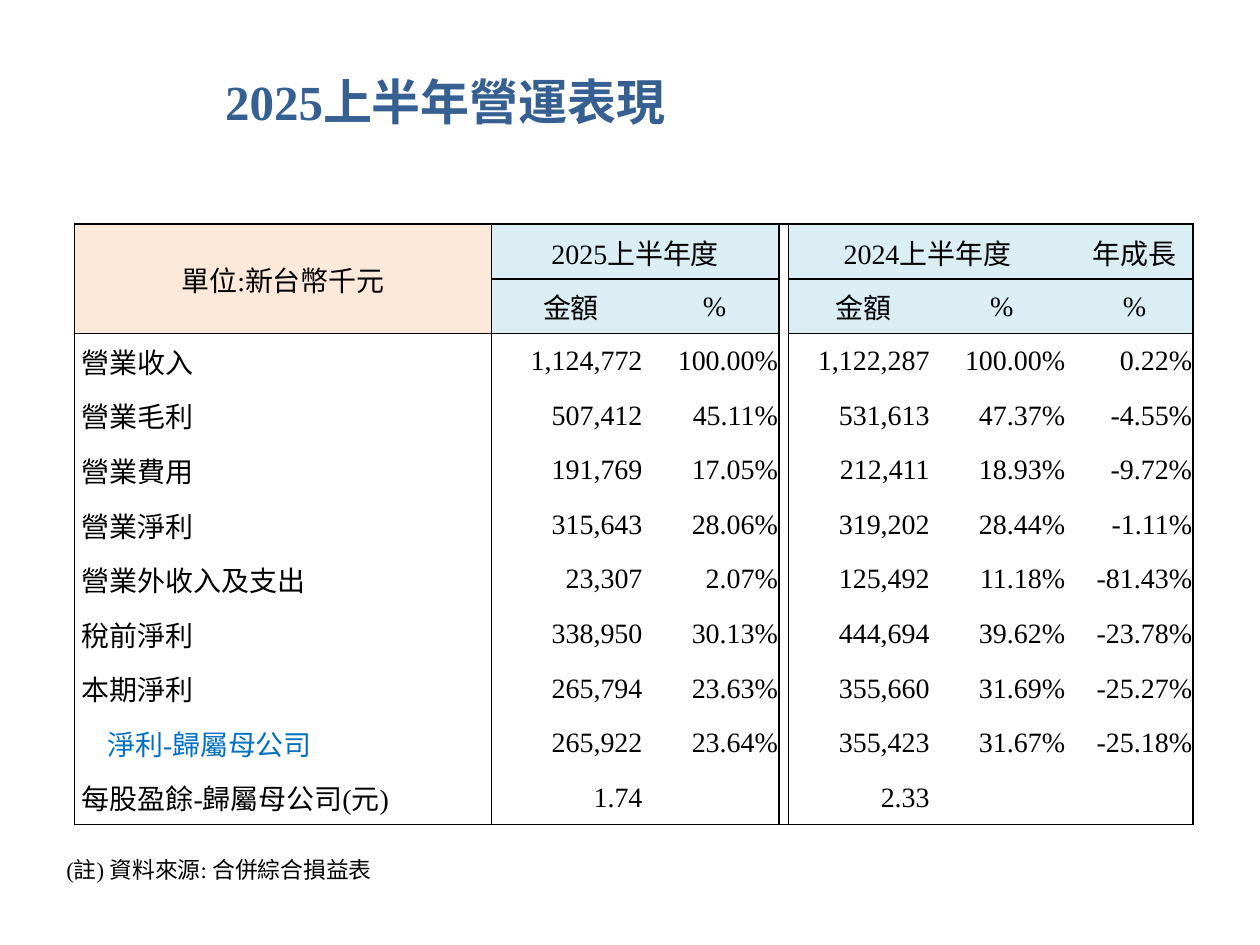
"""Build the slide with the operating results for the first half of 2025."""
from lxml import etree
from pptx import Presentation
from pptx import util as u
from pptx.dml.color import RGBColor
from pptx.enum import text
from pptx.oxml.ns import qn

COLORS = {"title": "376092", "text": "000000", "accent": "0070C0",
          "unit": "FDE9D9", "header": "DBEEF3"}
FONT = "Times New Roman"
NO_STYLE = "{2D5ABB26-0587-4C30-8999-92F81FD0307C}"

TITLE = "2025上半年營運表現"
NOTE = "(註) 資料來源: 合併綜合損益表"
HEADERS = [
    ["單位:新台幣千元", "2025上半年度", "", "", "2024上半年度", "", "", "年成長"],
    ["", "金額", "%", "", "金額", "%", "", "%"],
]
RESULTS = [
    ["營業收入", "1,124,772", "100.00%", "", "1,122,287", "100.00%", "", "0.22%"],
    ["營業毛利", "507,412", "45.11%", "", "531,613", "47.37%", "", "-4.55%"],
    ["營業費用", "191,769", "17.05%", "", "212,411", "18.93%", "", "-9.72%"],
    ["營業淨利", "315,643", "28.06%", "", "319,202", "28.44%", "", "-1.11%"],
    ["營業外收入及支出", "23,307", "2.07%", "", "125,492", "11.18%", "", "-81.43%"],
    ["稅前淨利", "338,950", "30.13%", "", "444,694", "39.62%", "", "-23.78%"],
    ["本期淨利", "265,794", "23.63%", "", "355,660", "31.69%", "", "-25.27%"],
    ["淨利-歸屬母公司", "265,922", "23.64%", "", "355,423", "31.67%", "", "-25.18%"],
    ["每股盈餘-歸屬母公司(元)", "1.74", "", "", "2.33", "", "", ""],
]
ROWS = HEADERS + RESULTS
SUB_ITEM = "淨利-歸屬母公司"
WIDTHS = [8.41, 3.2, 2.59, 0.2, 3, 2.59, 0.2, 2.36]
ROW_HEIGHT = 1.1
LABEL, GAP = 0, 3
AMOUNTS = (1, 4)
MERGES = [((0, 0), (1, 0)), ((0, 1), (0, 2)), ((0, 4), (0, 5))]
VERTICAL_RULES = {0, 1, 3, 4, len(WIDTHS)}


def style(para, size, color, bold=False):
    for span in para.runs:
        span.font.name = FONT
        span.font.size = u.Pt(size)
        span.font.bold = bold
        span.font.color.rgb = RGBColor.from_string(COLORS[color])


def add_text(page, words, place, size, color, bold=False):
    box = page.shapes.add_textbox(*(u.Cm(length) for length in place))
    frame = box.text_frame
    frame.word_wrap = True
    frame.auto_size = text.MSO_AUTO_SIZE.SHAPE_TO_FIT_TEXT
    frame.text = words
    style(frame.paragraphs[0], size, color, bold)


def has_rule(edge, col):
    """Tell whether a horizontal rule crosses a column at a row edge."""
    if edge in (0, len(ROWS)):
        return True
    return col != GAP and (edge == len(HEADERS) or edge == 1 and col != LABEL)


def draw_borders(cell, row, col):
    sides = {"L": col in VERTICAL_RULES, "R": col + 1 in VERTICAL_RULES,
             "T": has_rule(row, col), "B": has_rule(row + 1, col)}
    properties = cell._tc.get_or_add_tcPr()
    for side, shown in sides.items():
        line = etree.SubElement(properties, qn(f"a:ln{side}"), w=str(u.Pt(1)))
        if shown:
            fill = etree.SubElement(line, qn("a:solidFill"))
            etree.SubElement(fill, qn("a:srgbClr"), val=COLORS["text"])
        else:
            etree.SubElement(line, qn("a:noFill"))


def fill_cell(cell, row, col):
    is_header = row < len(HEADERS)
    words = ROWS[row][col]
    is_sub_item = words == SUB_ITEM
    draw_borders(cell, row, col)
    if is_header and col != GAP:
        cell.fill.solid()
        shade = "unit" if col == LABEL else "header"
        cell.fill.fore_color.rgb = RGBColor.from_string(COLORS[shade])
    else:
        cell.fill.background()

    left = right = 0.02
    if is_header:
        align = text.PP_ALIGN.CENTER
    elif col == LABEL:
        align = text.PP_ALIGN.LEFT
        left = 0.66 if is_sub_item else 0.15
    else:
        align = text.PP_ALIGN.RIGHT
        right = 0.16 if col in AMOUNTS else right
    cell.margin_left, cell.margin_right = u.Cm(left), u.Cm(right)
    cell.margin_top, cell.margin_bottom = u.Cm(0.02), 0
    cell.vertical_anchor = text.MSO_ANCHOR.MIDDLE
    if words:
        cell.text_frame.text = words
        para = cell.text_frame.paragraphs[0]
        para.alignment = align
        style(para, 16, "accent" if is_sub_item else "text")


def add_results(page):
    frame = page.shapes.add_table(
        len(ROWS), len(WIDTHS), u.Cm(1.5), u.Cm(4.52),
        u.Cm(sum(WIDTHS)), u.Cm(ROW_HEIGHT * len(ROWS)))
    table = frame.table
    table.first_row = table.horz_banding = False
    table._tbl.tblPr.find(qn("a:tableStyleId")).text = NO_STYLE
    for column, width in zip(table.columns, WIDTHS):
        column.width = u.Cm(width)
    for line in table.rows:
        line.height = u.Cm(ROW_HEIGHT)
    for start, end in MERGES:
        table.cell(*start).merge(table.cell(*end))
    for row in range(len(ROWS)):
        for col in range(len(WIDTHS)):
            fill_cell(table.cell(row, col), row, col)


def main():
    deck = Presentation()
    deck.slide_width, deck.slide_height = u.Cm(25.4), u.Cm(19.05)
    page = deck.slides.add_slide(deck.slide_layouts[6])
    add_text(page, TITLE, (4.29, 1.32, 9.5, 1.45), 28, "title", bold=True)
    add_text(page, NOTE, (1.09, 17.12, 6.73, 0.81), 13, "text")
    add_results(page)
    deck.save("out.pptx")


if __name__ == "__main__":
    main()
